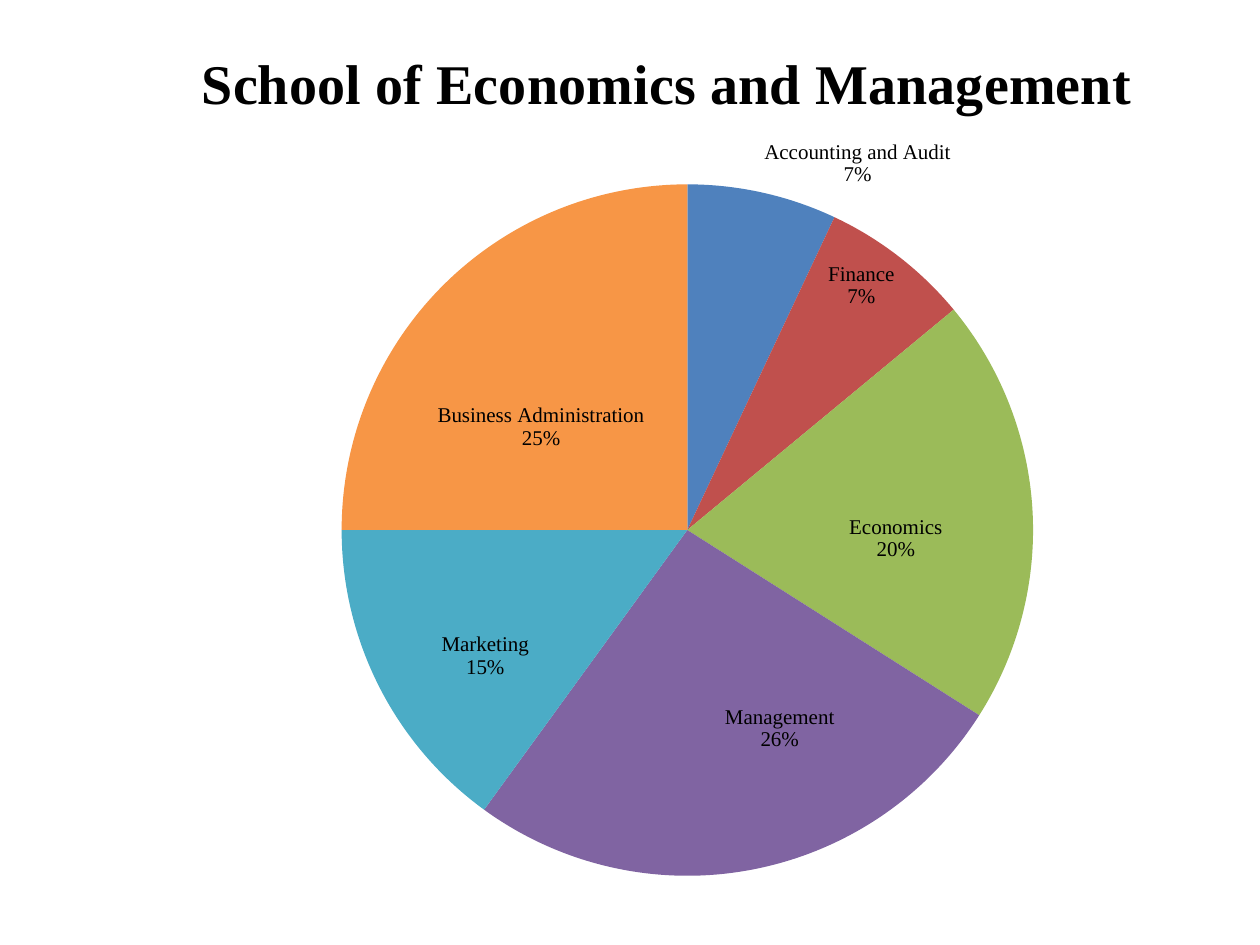
from lxml import etree
from pptx import Presentation
from pptx.chart.data import CategoryChartData
from pptx.dml.color import RGBColor
from pptx.enum.chart import XL_CHART_TYPE, XL_LABEL_POSITION
from pptx.oxml.ns import qn
from pptx.util import Cm, Pt

PIE = XL_CHART_TYPE.PIE
CENTER = XL_LABEL_POSITION.CENTER
INSIDE = XL_LABEL_POSITION.INSIDE_END
OUTSIDE = XL_LABEL_POSITION.OUTSIDE_END
SERIF = "Times New Roman"

# department, share in percent, colour, label position, label shift
departments = [
    ("Accounting and Audit", 7, "4F81BD", OUTSIDE, None),
    ("Finance", 7, "C0504D", INSIDE, None),
    ("Economics", 20, "9BBB59", CENTER, (0.03, 0.02)),
    ("Management", 26, "8064A2", CENTER, (0.05, 0.03)),
    ("Marketing", 15, "4BACC6", CENTER, (-0.04, 0.05)),
    ("Business Administration", 25, "F79646", CENTER, (-0.02, 0.02)),
]


def style_font(font, size, name=SERIF, color="000000", bold=False):
    font.size = Pt(size)
    font.name = name
    font.bold = bold
    font.color.rgb = RGBColor.from_string(color)


def set_layout(parent, index, **settings):
    """Give a chart part a manual layout, as fractions of the chart's size."""
    for old_layout in parent.findall(qn("c:layout")):
        parent.remove(old_layout)
    layout = etree.Element(qn("c:layout"))
    manual = etree.SubElement(layout, qn("c:manualLayout"))
    for tag, value in settings.items():
        etree.SubElement(manual, qn(f"c:{tag}")).set("val", str(value))
    parent.insert(index, layout)


prs = Presentation()
prs.slide_width, prs.slide_height = Cm(25.4), Cm(19.05)
slide = prs.slides.add_slide(prs.slide_layouts[6])

shares = CategoryChartData()
shares.categories = [department[0] for department in departments]
shares.add_series("Series 1", [department[1] for department in departments])
chart = slide.shapes.add_chart(PIE, Cm(1.2), Cm(0), Cm(24.2), Cm(19.05), shares).chart
style_font(chart.font, 10, "Calibri")
chart.has_legend = False

# Title
chart.has_title = True
title = chart.chart_title
title.include_in_layout = False
title_run = title.text_frame.paragraphs[0].add_run()
title_run.text = "School of Economics and Management"
style_font(title_run.font, 32, bold=True)
set_layout(title._element, 1, xMode="edge", yMode="edge", x=0.11, y=0.04)

# Pie
pie = chart.plots[0]
pie.vary_by_categories = True
series = pie.series[0]
set_layout(pie._element.getparent(), 0, layoutTarget="inner", xMode="edge",
           yMode="edge", x=0.235, y=0.195, w=0.576, h=0.732)

labels = series.data_labels
labels.show_category_name = True
labels.show_percentage = True
labels.show_value = False
style_font(labels.font, 12)

for number, (_, _, color, position, _) in enumerate(departments):
    point = series.points[number]
    point.format.fill.solid()
    point.format.fill.fore_color.rgb = RGBColor.from_string(color)
    point.data_label.position = position
    style_font(point.data_label.font, 12)

# Each label shows department and percentage on two lines
for label, department in zip(series._element.iter(qn("c:dLbl")), departments):
    for tag, shown in (("showCatName", "1"), ("showVal", "0"), ("showPercent", "1")):
        label.find(qn(f"c:{tag}")).set("val", shown)
    etree.SubElement(label, qn("c:separator")).text = "\n"
    shift = department[4]
    if shift:
        set_layout(label, 1, x=shift[0], y=shift[1])

prs.save("out.pptx")
